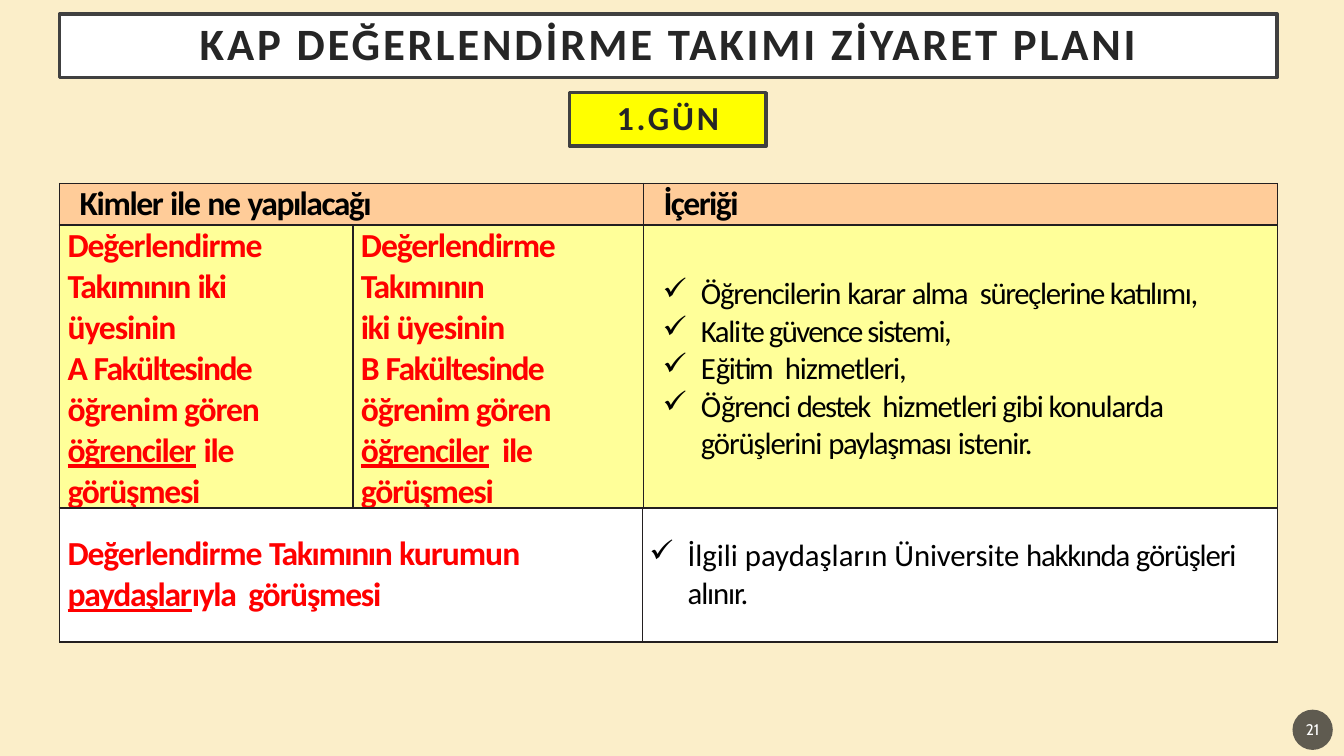
import pptx
import pptx.util
import pptx.dml.color
import pptx.enum.shapes
import pptx.enum.text
import pptx.oxml
import pptx.oxml.ns

COLORS = {
    "background": "FBEEC9", "white": "FFFFFF", "black": "000000", "red": "FF0000",
    "heading": "262626", "frame": "404040", "border": "231F20", "header": "FFCC99",
    "pale": "FFFF99", "badge": "FFFF00", "number": "1D1D1D",
}
HEADING = {"name": "Calibri", "bold": True, "color": "heading"}
HEADER = {"name": "Calibri", "size": 24, "bold": True, "color": "black"}
MEETING = {**HEADER, "color": "red"}
DETAIL = {**HEADER, "size": 22, "bold": False}
LEFT, WIDTH = 4.43, 90.6


def color(name):
    return pptx.dml.color.RGBColor.from_string(COLORS[name])


def cell(paragraphs, style, fill, margin, hanging=0, bullet=None, before=0, right=0):
    return {"paragraphs": paragraphs, "style": style, "fill": fill, "margin": margin,
            "hanging": hanging, "bullet": bullet, "before": before, "right": right}


class VisitSlide:
    def __init__(self, presentation):
        self.column = presentation.slide_width / 100
        self.row = presentation.slide_height / 100
        self.slide = presentation.slides.add_slide(presentation.slide_layouts[5])
        self.slide.background.fill.solid()
        self.slide.background.fill.fore_color.rgb = color("background")

    def place(self, left, top, width, height):
        return [int(left * self.column), int(top * self.row),
                int(width * self.column), int(height * self.row)]

    def add_run(self, paragraph, text, style, spacing=0, underline=False):
        run = paragraph.add_run()
        run.text = text
        values = {**style, "underline": underline or None}
        values["size"] = pptx.util.Pt(values["size"])
        run.font.color.rgb = color(values.pop("color"))
        for name, value in values.items():
            setattr(run.font, name, value)
        run.font._element.set("spc", str(round(spacing * 100)))

    def label(self, shape, text, style, spacing=0, line_spacing=1.0, inset=(0.2, 0.2)):
        frame = shape.text_frame
        horizontal, vertical = (pptx.util.Inches(value) for value in inset)
        settings = {
            "margin_left": horizontal, "margin_right": horizontal,
            "margin_top": vertical, "margin_bottom": vertical, "word_wrap": True,
            "auto_size": pptx.enum.text.MSO_AUTO_SIZE.NONE,
            "vertical_anchor": pptx.enum.text.MSO_ANCHOR.MIDDLE,
        }
        for name, value in settings.items():
            setattr(frame, name, value)
        paragraph = frame.paragraphs[0]
        paragraph.alignment = pptx.enum.text.PP_ALIGN.CENTER
        paragraph.line_spacing = line_spacing
        self.add_run(paragraph, text, style, spacing)

    def paint(self, shape, fill, framed=True):
        shape.shadow.inherit = False
        shape.fill.solid()
        shape.fill.fore_color.rgb = color(fill)
        if framed:
            shape.line.color.rgb = color("frame")
            shape.line.width = pptx.util.Pt(2.5)
        else:
            shape.line.fill.background()

    def add_title(self, text, area):
        title = self.slide.shapes.title
        for name, value in zip(("left", "top", "width", "height"), self.place(*area)):
            setattr(title, name, value)
        self.paint(title, "white")
        self.label(title, text, {**HEADING, "size": 32}, 2, 0.9)

    def add_badge(self, text, area):
        badge = self.slide.shapes.add_shape(
            pptx.enum.shapes.MSO_SHAPE.RECTANGLE, *self.place(*area))
        self.paint(badge, "badge")
        self.label(badge, text, {**HEADING, "size": 24}, 2, 0.9)

    def add_page_number(self, text, area):
        circle = self.slide.shapes.add_shape(
            pptx.enum.shapes.MSO_SHAPE.OVAL, *self.place(*area))
        self.paint(circle, "number", framed=False)
        fill_color = circle._element.spPr.find(".//" + pptx.oxml.ns.qn("a:srgbClr"))
        fill_color.append(pptx.oxml.parse_xml(
            f'<a:alpha {pptx.oxml.ns.nsdecls("a")} val="70000"/>'))
        style = {"name": "Cabin", "size": 11, "bold": False, "color": "white"}
        self.label(circle, text, style, inset=(0.02, 0.05))

    def add_table(self, top, height, widths, cells):
        area = self.place(LEFT, top, WIDTH, height)
        table = self.slide.shapes.add_table(1, len(widths), *area).table
        table.first_row = table.horz_banding = False
        for index, (width, content) in enumerate(zip(widths, cells)):
            table.columns[index].width = int(width * self.column)
            self.fill_cell(table.cell(0, index), content)

    def fill_cell(self, target, content):
        settings = {
            "margin_left": 0, "margin_right": pptx.util.Inches(content["right"]),
            "margin_top": 0, "margin_bottom": 0,
            "vertical_anchor": pptx.enum.text.MSO_ANCHOR.MIDDLE,
        }
        for name, value in settings.items():
            setattr(target, name, value)
        target.fill.solid()
        target.fill.fore_color.rgb = color(content["fill"])
        for position, side in enumerate("LRTB"):
            target._tc.tcPr.insert(position, pptx.oxml.parse_xml(
                f'<a:ln{side} {pptx.oxml.ns.nsdecls("a")} w="12700"><a:solidFill>'
                f'<a:srgbClr val="{COLORS["border"]}"/></a:solidFill></a:ln{side}>'))
        frame = target.text_frame
        for index, runs in enumerate(content["paragraphs"]):
            paragraph = frame.add_paragraph() if index else frame.paragraphs[0]
            paragraph.space_before = pptx.util.Pt(content["before"])
            properties = paragraph._p.get_or_add_pPr()
            properties.set("marL", str(pptx.util.Inches(content["margin"])))
            properties.set("indent", str(-pptx.util.Inches(content["hanging"])))
            if content["bullet"]:
                properties.append(pptx.oxml.parse_xml(
                    f'<a:buChar {pptx.oxml.ns.nsdecls("a")} char="{content["bullet"]}"/>'))
            for text, *spacing in runs:
                self.add_run(paragraph, text, content["style"], *spacing)


def main():
    presentation = pptx.Presentation()
    presentation.slide_width = pptx.util.Inches(13.33)
    presentation.slide_height = pptx.util.Inches(7.5)
    visit = VisitSlide(presentation)
    visit.add_page_number("21", (96.17, 93.87, 3, 5.33))
    visit.add_title("KAP DEĞERLENDİRME TAKIMI ZİYARET PLANI", (LEFT, 1.87, WIDTH, 8.4))

    visit.add_table(24.27, 5.5, (43.44, 47.16), [
        cell([[("Kimler ", -1), ("ile ", -0.9), ("ne ", -0.8), ("yapılacağı", -1.1)]],
             HEADER, "header", 0.2, before=1.6),
        cell([[("İçeriği", -1.1)]], HEADER, "header", 0.2, before=1.6),
    ])

    faculty_a = [
        [("Değerlendirme  ", -0.8), ("Takımının ", -1), ("iki ", -1.1), ("üyesinin", -0.8)],
        [("A ", -1.4), ("Fakültesinde", -1.1)],
        [("öğreni", -0.7), ("m gören ", -0.8), ("öğrenciler", -0.9, True), (" ", -1.1),
         ("ile görüşmesi", -0.9)],
    ]
    faculty_b = [
        [("Değerlendirme ", -0.8), ("Takımının", -1)],
        [("iki ", -1.1), ("üyesinin", -0.8)],
        [("B ", -1.3), ("Fakültesinde ", -1.1), ("öğrenim gören ", -0.8),
         ("öğrenciler", -0.9, True), ("  ile görüşmesi", -0.9)],
    ]
    topics = [
        [("Öğrencilerin ", -0.8), ("karar ", -0.9), ("alma  ", -1),
         ("süreçlerine katılımı,", -0.9)],
        [("Kali", -0.9), ("te güvence sistemi,", -1.1)],
        [("E", -1.1), ("ğitim  ", -1), ("hizmetleri,", -0.8)],
        [("Ö", -0.8), ("ğrenci ", -0.9), ("destek  ", -1.1),
         ("hizmetleri gibi konularda  görüşlerini ", -0.8), ("paylaşması ", -1),
         ("istenir.", -0.8)],
    ]
    visit.add_table(29.87, 35.2, (21.83, 21.61, 47.16), [
        cell(faculty_a, MEETING, "pale", 0.08, right=0.3),
        cell(faculty_b, MEETING, "pale", 0.08),
        cell(topics, DETAIL, "pale", 0.57, hanging=0.38, bullet="✓"),
    ])

    stakeholders = [("Değerlendirme ", -0.8), ("Takımının ", -1), ("kurumun ", -0.7),
                    ("paydaşlar", -0.9, True), ("ıyla  görüşmesi", -0.9)]
    opinions = [("İlgili paydaşların ", 0), ("Üniversite ", -0.1), ("hakkında ", -0.9),
                ("görüşleri alınır.", -0.8)]
    visit.add_table(67.2, 17.73, (43.36, 47.24), [
        cell([stakeholders], MEETING, "white", 0.08, before=1.6, right=0.3),
        cell([opinions], DETAIL, "white", 0.45, hanging=0.38, bullet="✓", before=1.6),
    ])

    visit.add_badge("1.GÜN", (42.38, 12.27, 14.63, 7.07))
    presentation.save("out.pptx")


if __name__ == "__main__":
    main()
